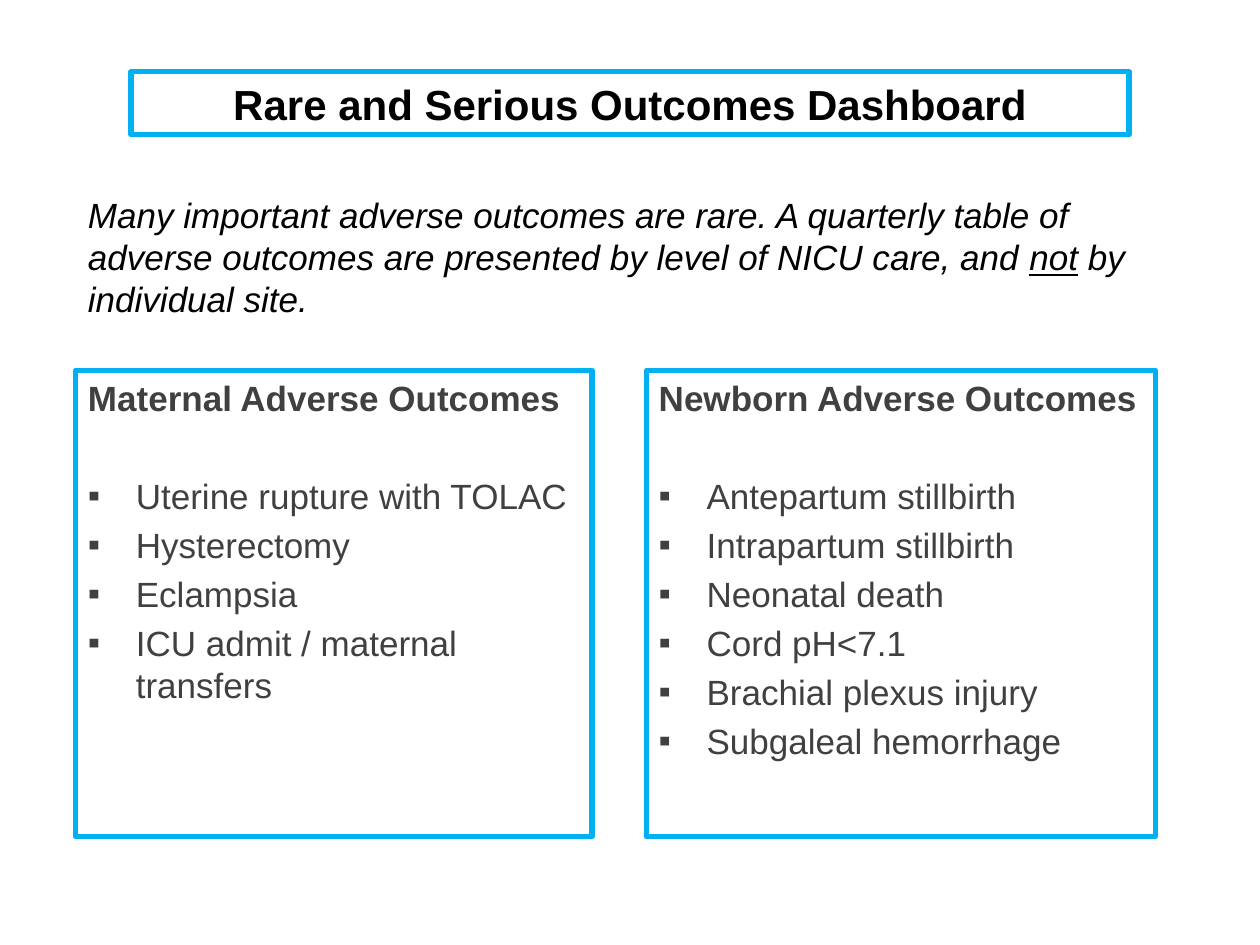
from lxml import etree
from pptx import Presentation
from pptx import util as u
from pptx.dml.color import RGBColor
from pptx.enum import shapes, text
from pptx.oxml.ns import qn

TITLE = "Rare and Serious Outcomes Dashboard"
INTRO = [
    ("Many important adverse outcomes are rare. A quarterly table of adverse "
     "outcomes are presented by level of NICU care, and ", False),
    ("not", True),
    (" by individual site.", False),
]
PANELS = [
    ("Maternal Adverse Outcomes",
     ["Uterine rupture with TOLAC", "Hysterectomy", "Eclampsia",
      "ICU admit / maternal transfers"]),
    ("Newborn Adverse Outcomes",
     ["Antepartum stillbirth", "Intrapartum stillbirth", "Neonatal death",
      "Cord pH<7.1", "Brachial plexus injury", "Subgaleal hemorrhage"]),
]

BLUE = RGBColor(0x00, 0xB0, 0xF0)
GRAY = RGBColor(0x40, 0x40, 0x40)
BLACK = RGBColor(0, 0, 0)
FONT = "Arial"

WIDTH, HEIGHT = 10, 7.5
LEFT = 0.6
PANEL_TOP, PANEL_HEIGHT = 2.94, 3.7
PANEL_WIDTHS, PANEL_GAP = (4.1, 4.04), 0.43
CONTENT_WIDTH = sum(PANEL_WIDTHS) + PANEL_GAP
TITLE_WIDTH = 7.92
BODY_SIZE, PARAGRAPH_GAP = 20, 4
HEADING_GAP = 32  # one empty line between a heading and its list
BULLET_INDENT = 0.38


def style(paragraph, size, color, bold=False, italic=False):
    font = paragraph.font
    font.name, font.size, font.color.rgb = FONT, u.Pt(size), color
    font.bold, font.italic = bold, italic


def add_outlined_box(slide, left, top, width, height, anchor):
    box = slide.shapes.add_shape(
        shapes.MSO_SHAPE.RECTANGLE, *map(u.Inches, (left, top, width, height)))
    box.shadow.inherit = False
    box.fill.background()
    box.line.color.rgb = BLUE
    box.line.width = u.Pt(3)
    box.text_frame.word_wrap = True
    box.text_frame.vertical_anchor = anchor
    return box.text_frame


def add_bullet(paragraph):
    properties = paragraph._p.get_or_add_pPr()
    indent = u.Inches(BULLET_INDENT)
    properties.set("marL", str(indent))
    properties.set("indent", str(-indent))
    etree.SubElement(properties, qn("a:buFont")).set("typeface", FONT)
    etree.SubElement(properties, qn("a:buChar")).set("char", "▪")


def add_panel(slide, left, width, heading, outcomes):
    frame = add_outlined_box(slide, left, PANEL_TOP, width, PANEL_HEIGHT,
                             text.MSO_ANCHOR.TOP)
    for index, line in enumerate([heading] + outcomes):
        paragraph = frame.add_paragraph() if index else frame.paragraphs[0]
        paragraph.text = line
        paragraph.alignment = text.PP_ALIGN.LEFT
        paragraph.space_before = u.Pt(HEADING_GAP if index == 1 else PARAGRAPH_GAP)
        if index:
            add_bullet(paragraph)
        style(paragraph, BODY_SIZE, GRAY, bold=index == 0)


def add_intro(slide):
    box = slide.shapes.add_textbox(
        *map(u.Inches, (LEFT, 1.49, CONTENT_WIDTH, 1.04)))
    box.text_frame.word_wrap = True
    paragraph = box.text_frame.paragraphs[0]
    paragraph.space_before = u.Pt(PARAGRAPH_GAP)
    style(paragraph, BODY_SIZE, BLACK, italic=True)
    for words, underlined in INTRO:
        run = paragraph.add_run()
        run.text = words
        if underlined:
            run.font.underline = True


def add_title(slide):
    frame = add_outlined_box(slide, (WIDTH - TITLE_WIDTH) / 2, 0.57, TITLE_WIDTH,
                             0.5, text.MSO_ANCHOR.MIDDLE)
    paragraph = frame.paragraphs[0]
    paragraph.text = TITLE
    paragraph.alignment = text.PP_ALIGN.CENTER
    style(paragraph, 24, BLACK, bold=True)


def main():
    presentation = Presentation()
    presentation.slide_width = u.Inches(WIDTH)
    presentation.slide_height = u.Inches(HEIGHT)
    slide = presentation.slides.add_slide(presentation.slide_layouts[6])
    left = LEFT
    for width, (heading, outcomes) in zip(PANEL_WIDTHS, PANELS):
        add_panel(slide, left, width, heading, outcomes)
        left += width + PANEL_GAP
    add_intro(slide)
    add_title(slide)
    presentation.save("out.pptx")


if __name__ == "__main__":
    main()
